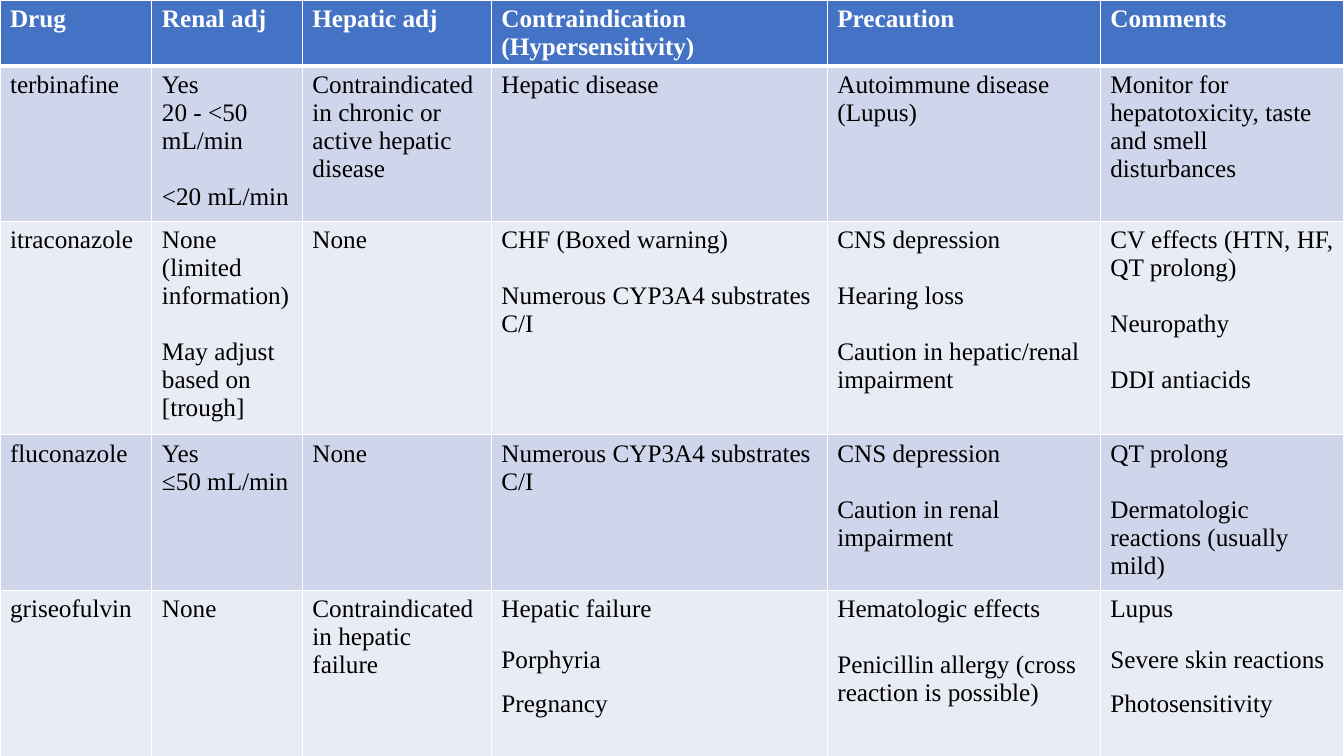
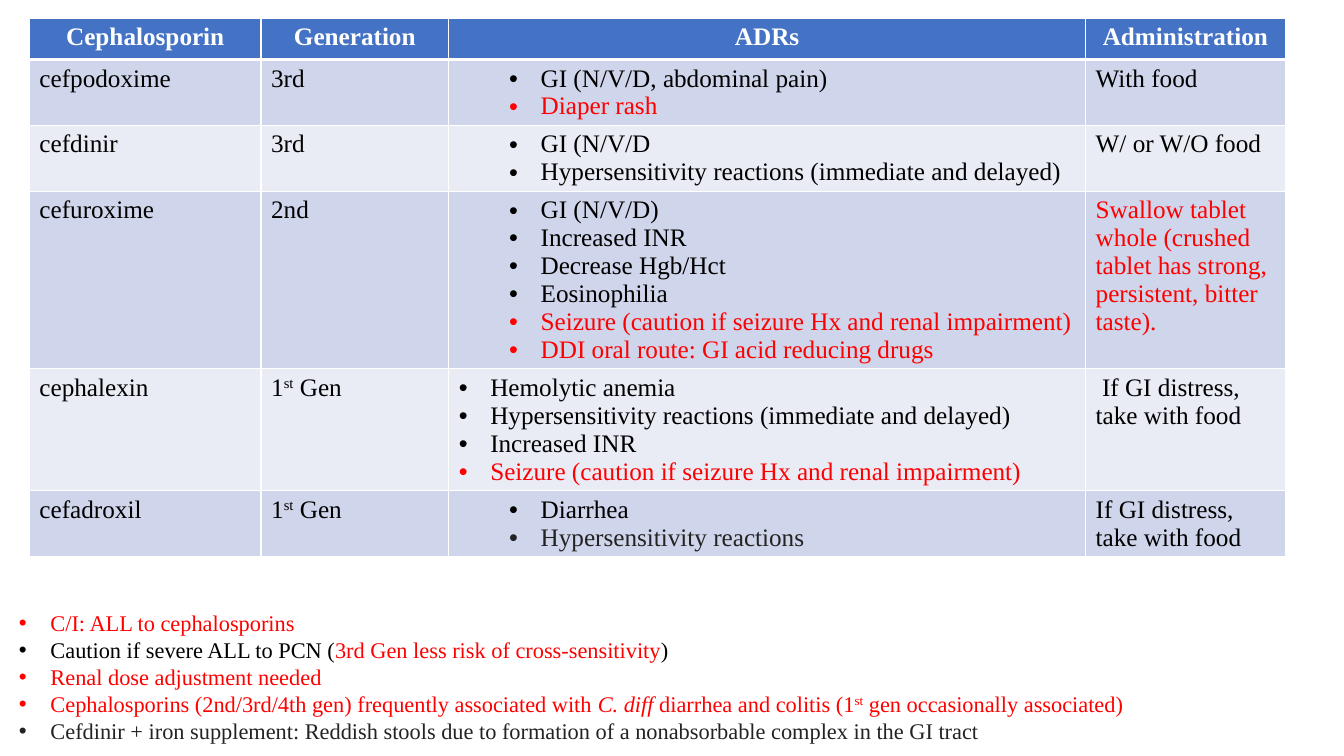
from lxml import etree
from pptx import Presentation
from pptx.dml.color import RGBColor
from pptx.enum import text as t
from pptx.oxml import ns
from pptx.util import Pt

FONT = "Times New Roman"
WHITE, BLACK, RED, DARK = "FFFFFF", "000000", "FF0000", "232323"
HEADER, BANDS = "4472C4", ("CFD5EA", "E9EBF5")
HANG, NESTED = 22.5, 58.5

DRUG_HEAD = ["Drug", "Renal adj", "Hepatic adj",
             "Contraindication (Hypersensitivity)", "Precaution", "Comments"]
CEPH_HEAD = ["Cephalosporin", "Generation", "ADRs", "Administration"]
FIRST_GEN = [(["1", ("st", {"base": 30}), " Gen"], {})]
HYPERSENSITIVITY = "Hypersensitivity reactions (immediate and delayed)"


def rgb(color):
    return RGBColor.from_string(color)


def red(runs):
    return runs, {"color": RED}


def gap(text, before=20):
    return text, {"before": before}


def as_pair(item):
    return item if isinstance(item, tuple) else (item, {})


def bullets(*items, left=NESTED):
    return [(runs, {"left": left, **fmt}) for runs, fmt in map(as_pair, items)]


def add_run(p, text, size=18, color=BLACK, bold=False, italic=False, base=0):
    r = p.add_run()
    r.text = text
    f = r.font
    f.name, f.size, f.bold, f.italic = FONT, Pt(size), bold, italic
    f.color.rgb = rgb(color)
    if base:
        f._element.set("baseline", str(base * 1000))


def add_bullet(p, left):
    pPr = p._p.get_or_add_pPr()
    pPr.set("marL", str(Pt(left)))
    pPr.set("indent", str(-Pt(HANG)))
    etree.SubElement(pPr, ns.qn("a:buFont")).set("typeface", "Arial")
    etree.SubElement(pPr, ns.qn("a:buChar")).set("char", "•")


def add_text(p, runs, align=None, before=0, line=None, left=None, **fmt):
    p.alignment = align
    if before:
        p.space_before = Pt(before)
    if line:
        p.line_spacing = Pt(line)
    if left is not None:
        add_bullet(p, left)
    for run in [runs] if isinstance(runs, str) else runs:
        text, own = as_pair(run)
        add_run(p, text, **{**fmt, **own})


def fill_frame(tf, items, **fmt):
    if isinstance(items, str):
        items = [items]
    for i, item in enumerate(items):
        runs, own = as_pair(item)
        p = tf.add_paragraph() if i else tf.paragraphs[0]
        add_text(p, runs, **{**fmt, **own})


def set_borders(cell, top=1, bottom=1):
    tcPr = cell._tc.get_or_add_tcPr()
    for side, width in (("L", 1), ("R", 1), ("T", top), ("B", bottom)):
        ln = etree.SubElement(tcPr, ns.qn("a:ln" + side), w=str(Pt(width)))
        paint = etree.SubElement(ln, ns.qn("a:solidFill"))
        etree.SubElement(paint, ns.qn("a:srgbClr")).set("val", WHITE)


def add_table(s, left, top, widths, heights, head, rows, head_align=None):
    table = s.shapes.add_table(len(heights), len(widths), Pt(left), Pt(top),
                               Pt(sum(widths)), Pt(sum(heights))).table
    for col, width in zip(table.columns, widths):
        col.width = Pt(width)
    for row, height in zip(table.rows, heights):
        row.height = Pt(height)
    for i, items in enumerate([head] + rows):
        if i == 0:
            fill, borders = HEADER, {"bottom": 3}
            fmt = {"color": WHITE, "bold": True, "align": head_align}
        else:
            fill, borders = BANDS[(i - 1) % 2], {"top": 3 if i == 1 else 1}
            fmt = {}
        for j, item in enumerate(items):
            cell = table.cell(i, j)
            set_borders(cell, **borders)
            cell.fill.solid()
            cell.fill.fore_color.rgb = rgb(fill)
            fill_frame(cell.text_frame, item, **fmt)


def add_notes_list(s, left, top, width, height, items):
    tf = s.shapes.add_textbox(Pt(left), Pt(top), Pt(width), Pt(height)).text_frame
    tf.word_wrap = True
    tf.auto_size = t.MSO_AUTO_SIZE.SHAPE_TO_FIT_TEXT
    fill_frame(tf, items, size=16, line=19.3)


def antifungal_slide(s):
    rows = [
        ["terbinafine",
         ["Yes", "20 - <50 mL/min", gap("<20 mL/min")],
         "Contraindicated in chronic or active hepatic disease",
         "Hepatic disease",
         "Autoimmune disease (Lupus)",
         "Monitor for hepatotoxicity, taste and smell disturbances"],
        ["itraconazole",
         ["None (limited information)", gap("May adjust based on [trough]")],
         "None",
         ["CHF (Boxed warning)", gap("Numerous CYP3A4 substrates C/I")],
         ["CNS depression", gap("Hearing loss"),
          gap("Caution in hepatic/renal impairment")],
         ["CV effects (HTN, HF, QT prolong)", gap("Neuropathy"),
          gap("DDI antiacids")]],
        ["fluconazole",
         ["Yes", "≤50 mL/min"],
         "None",
         "Numerous CYP3A4 substrates C/I",
         ["CNS depression", gap("Caution in renal impairment")],
         ["QT prolong", gap("Dermatologic reactions (usually mild)")]],
        ["griseofulvin",
         "None",
         "Contraindicated in hepatic failure",
         ["Hepatic failure", gap("Porphyria", 16.5), gap("Pregnancy", 11.5)],
         ["Hematologic effects",
          gap("Penicillin allergy (cross reaction is possible)")],
         ["Lupus", gap("Severe skin reactions", 16.5),
          gap("Photosensitivity", 11.5)]],
    ]
    add_table(s, 0, 0, [108.5, 107.5, 135, 240, 195, 174],
              [46.5, 111, 152.5, 111, 119], DRUG_HEAD, rows)


def cephalosporin_slide(s):
    seizure = red("Seizure (caution if seizure Hx and renal impairment)")
    rows = [
        ["cefpodoxime", "3rd",
         bullets("GI (N/V/D, abdominal pain)", red("Diaper rash")),
         "With food"],
        ["cefdinir", "3rd",
         bullets("GI (N/V/D", HYPERSENSITIVITY),
         "W/ or W/O food"],
        ["cefuroxime", "2nd",
         bullets("GI (N/V/D)", "Increased INR", "Decrease Hgb/Hct",
                 "Eosinophilia", seizure,
                 red("DDI oral route: GI acid reducing drugs")),
         [red("Swallow tablet whole (crushed tablet has strong, "
              "persistent, bitter taste).")]],
        ["cephalexin", FIRST_GEN,
         bullets("Hemolytic anemia", HYPERSENSITIVITY, "Increased INR",
                 seizure, left=HANG),
         " If GI distress, take with food"],
        ["cefadroxil", FIRST_GEN,
         bullets("Diarrhea", ("Hypersensitivity reactions", {"color": DARK})),
         "If GI distress, take with food"],
    ]
    add_table(s, 21, 13, [165.5, 134, 455, 142.5],
              [29.5, 47, 47, 126.5, 87, 47], CEPH_HEAD, rows,
              head_align=t.PP_ALIGN.CENTER)
    add_notes_list(s, 6.5, 431.5, 953, 104, bullets(
        red("C/I: ALL to cephalosporins"),
        ["Caution if severe ALL to PCN (",
         red("3rd Gen less risk of cross-sensitivity"), ")"],
        red("Renal dose adjustment needed"),
        red(["Cephalosporins (2nd/3rd/4th gen) frequently associated with ",
             ("C. diff ", {"italic": True}), "diarrhea and colitis (1",
             ("st", {"base": 30}), " gen occasionally associated)"]),
        ("Cefdinir + iron supplement: Reddish stools due to formation of a "
         "nonabsorbable complex in the GI tract", {"color": DARK}),
        left=HANG))


def main():
    prs = Presentation()
    prs.slide_width, prs.slide_height = Pt(960), Pt(540)
    for build in (antifungal_slide, cephalosporin_slide):
        build(prs.slides.add_slide(prs.slide_layouts[6]))
    prs.save("out.pptx")


if __name__ == "__main__":
    main()
